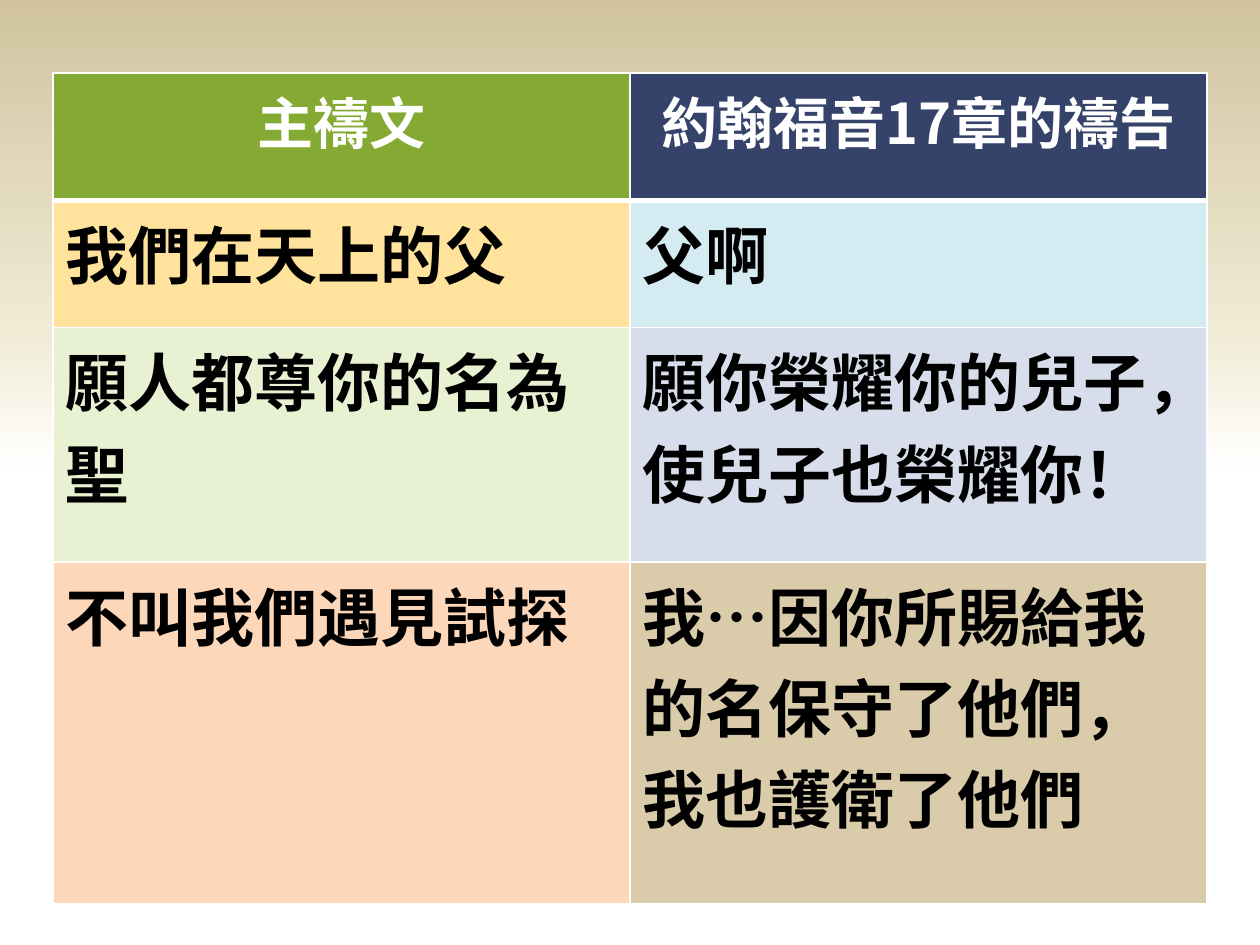
"""Build a slide comparing the Lord's Prayer with the prayer in John 17."""
from copy import deepcopy

from lxml.etree import SubElement
from pptx import Presentation
from pptx.dml.color import RGBColor
from pptx.enum.text import PP_ALIGN
from pptx.oxml.ns import qn
from pptx.util import Inches, Pt

FONT = "Noto Sans CJK SC"
WHITE = RGBColor(0xFF, 0xFF, 0xFF)
BLACK = RGBColor(0x00, 0x00, 0x00)
CREAM = RGBColor(0xF0, 0xEB, 0xD5)
SAND = RGBColor(0xD1, 0xC3, 0x9F)
GREEN = RGBColor(0x84, 0xAA, 0x33)
NAVY = RGBColor(0x35, 0x43, 0x6A)
YELLOW = RGBColor(0xFF, 0xE3, 0x9D)
AQUA = RGBColor(0xD4, 0xEB, 0xF1)
LIME = RGBColor(0xE8, 0xF2, 0xD3)
LAVENDER = RGBColor(0xD7, 0xDD, 0xEB)
PEACH = RGBColor(0xFD, 0xD7, 0xBA)
TAN = RGBColor(0xDA, 0xCC, 0xAB)

BACKDROP = [(0.5, WHITE), (0.65, CREAM), (1, SAND)]
PRAYERS = [
    (1.01, [("主禱文", GREEN), ("約翰福音17章的禱告", NAVY)]),
    (1.01, [("我們在天上的父", YELLOW), ("父啊", AQUA)]),
    (1.86, [("願人都尊你的名為聖", LIME),
            ("願你榮耀你的兒子，使兒子也榮耀你！", LAVENDER)]),
    (2.71, [("不叫我們遇見試探", PEACH),
            ("我…因你所賜給我的名保守了他們，我也護衛了他們", TAN)]),
]
LEFT, TOP, COLUMN_WIDTH = 0.42, 0.58, 4.58


def paint_background(slide):
    """Fill the background with the vertical gradient."""
    fill = slide.background.fill
    fill.gradient()
    fill.gradient_angle = 90
    stop_list = next(slide.element.iter(qn("a:gsLst")))
    stop_list.append(deepcopy(stop_list[0]))
    for stop, (position, color) in zip(fill.gradient_stops, BACKDROP):
        stop.position = position
        stop.color.rgb = color


def add_borders(cell, widths):
    """Draw white cell borders, placed ahead of the cell fill."""
    properties = cell._tc.get_or_add_tcPr()
    for index, (side, width) in enumerate(widths.items()):
        border = SubElement(properties, qn(f"a:ln{side}"), w=str(Pt(width)))
        solid = SubElement(border, qn("a:solidFill"))
        SubElement(solid, qn("a:srgbClr"), val=str(WHITE))
        properties.insert(index, border)


def write_cell(cell, text, color, is_header, is_below_header):
    """Set the text, fill and borders of one cell."""
    cell.fill.solid()
    cell.fill.fore_color.rgb = color
    add_borders(cell, {"L": 1, "R": 1, "T": 3 if is_below_header else 1,
                       "B": 3 if is_header else 1})
    cell.text_frame.text = text
    paragraph = cell.text_frame.paragraphs[0]
    paragraph.alignment = PP_ALIGN.CENTER if is_header else PP_ALIGN.LEFT
    font = paragraph.runs[0].font
    font.name = FONT
    font.size = Pt(32 if is_header else 36)
    font.bold = True
    font.color.rgb = WHITE if is_header else BLACK
    SubElement(font._element, qn("a:ea"), typeface=FONT)


def main():
    """Build and save the slide."""
    deck = Presentation()
    deck.slide_width, deck.slide_height = Inches(10), Inches(7.5)
    slide = deck.slides.add_slide(deck.slide_layouts[6])
    paint_background(slide)

    height = sum(row_height for row_height, _ in PRAYERS)
    comparison = slide.shapes.add_table(
        len(PRAYERS), 2, Inches(LEFT), Inches(TOP),
        Inches(2 * COLUMN_WIDTH), Inches(height)).table
    for row, (row_height, entries) in enumerate(PRAYERS):
        comparison.rows[row].height = Inches(row_height)
        for column, (text, color) in enumerate(entries):
            write_cell(comparison.cell(row, column), text, color,
                       row == 0, row == 1)
    deck.save("out.pptx")


if __name__ == "__main__":
    main()
